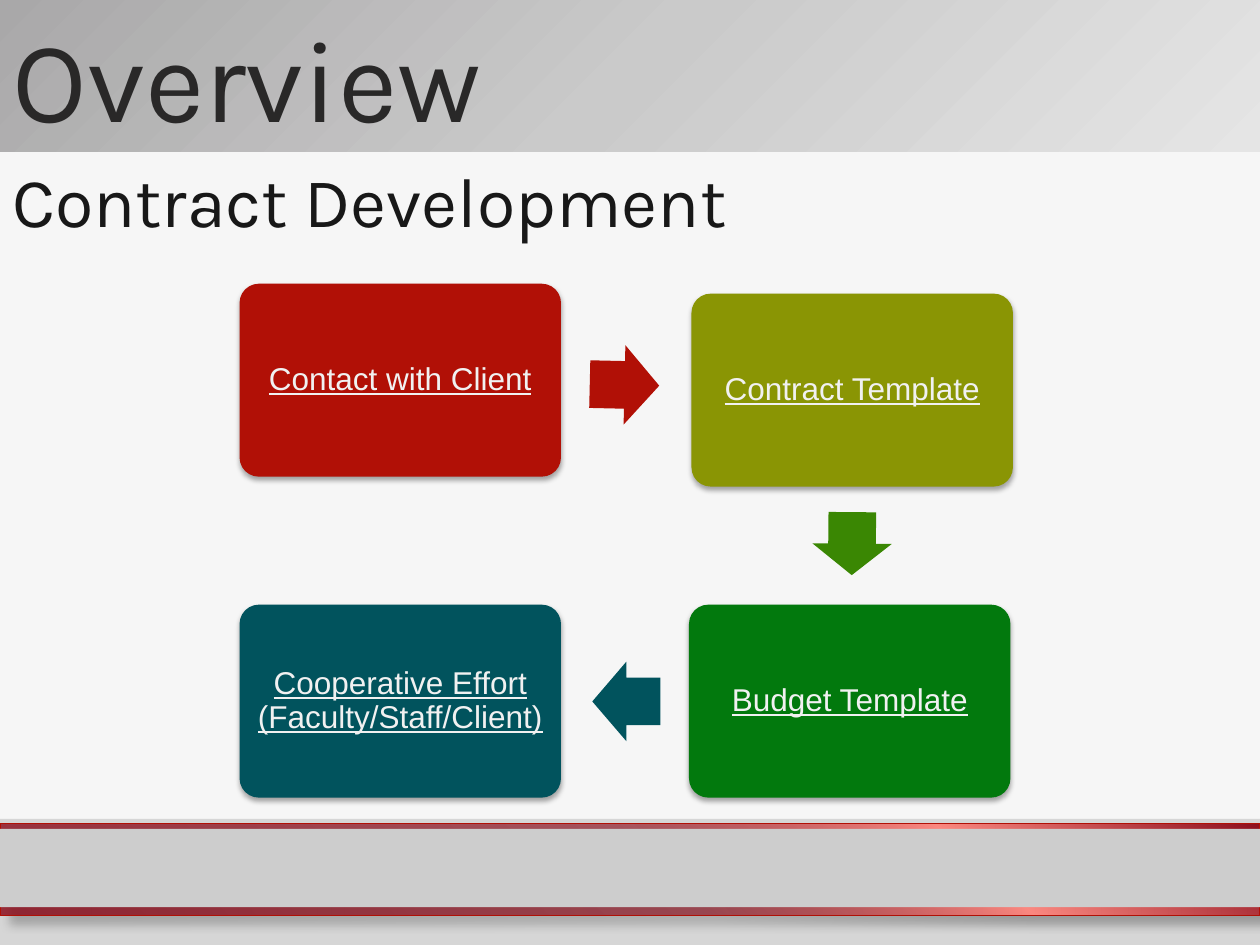
from lxml import etree
from pptx import Presentation
from pptx.dml.color import RGBColor
from pptx.enum.shapes import MSO_SHAPE
from pptx.enum.text import MSO_ANCHOR, PP_ALIGN
from pptx.oxml.ns import qn
from pptx.util import Cm, Pt

RECT = MSO_SHAPE.RECTANGLE
ROUNDED = MSO_SHAPE.ROUNDED_RECTANGLE
ARROW = MSO_SHAPE.RIGHT_ARROW
MIDDLE = MSO_ANCHOR.MIDDLE
LEFT, CENTER = PP_ALIGN.LEFT, PP_ALIGN.CENTER
TITLE_ONLY = 5

COLORS = {
    "page": "F6F6F6", "title": "292828", "subtitle": "181818", "label": "F1F1F1",
    "footer": "D6D6D6", "strip": "CDCDCD", "edge": "B11006",
    "maroon": "8C0E1D", "salmon": "FB8880", "shadow": "000000",
    "gray_dark": "A9A8A9", "gray_mid": "CACACA", "gray_light": "E5E5E5",
    "red": "B11006", "olive": "8A9504", "lime": "3A8703",
    "green": "02790D", "teal": "01535D",
}
STEP_SIZE = (6.48, 3.89)
# label, color, left and top within the diagram
STEPS = [
    ("Contact with Client", "red", 0, 0),
    ("Contract Template", "olive", 9.11, 0.2),
    ("Budget Template", "green", 9.06, 6.47),
    ("Cooperative Effort (Faculty/Staff/Client)", "teal", 0, 6.47),
]
# color, left, top, width within the diagram, rotation
ARROWS = [
    ("red", 7.06, 1.24, 1.4, 1.3),
    ("lime", 11.71, 4.44, 1.27, 90.5),
    ("teal", 7.11, 7.62, 1.37, 180),
]


def rgb(name):
    return RGBColor.from_string(COLORS[name])


def add_color(parent, name, alpha=100):
    color = etree.SubElement(parent, qn("a:srgbClr"), val=COLORS[name])
    if alpha < 100:
        etree.SubElement(color, qn("a:alpha"), val=str(alpha * 1000))


def set_gradient(shape, stops, angle):
    """Fill with (position, color, alpha) stops; the angle runs clockwise."""
    shape.fill.gradient()
    gradient = shape.element.spPr.find(qn("a:gradFill"))
    for child in list(gradient):
        gradient.remove(child)
    stop_list = etree.SubElement(gradient, qn("a:gsLst"))
    for position, name, alpha in stops:
        stop = etree.SubElement(stop_list, qn("a:gs"), pos=str(position * 1000))
        add_color(stop, name, alpha)
    etree.SubElement(gradient, qn("a:lin"), ang=str(angle * 60000), scaled="0")


def set_shadow(shape, alpha, blur, distance, angle):
    effects = shape.element.spPr.find(qn("a:effectLst"))
    shadow = etree.SubElement(
        effects, qn("a:outerShdw"), blurRad=str(Pt(blur)), dist=str(Pt(distance)),
        dir=str(angle * 60000), algn="ctr", rotWithShape="0")
    add_color(shadow, "shadow", alpha)


def add_block(page, kind, box, color):
    shape = page.shapes.add_shape(kind, *map(Cm, box))
    shape.shadow.inherit = False
    shape.fill.solid()
    shape.fill.fore_color.rgb = rgb(color)
    shape.line.fill.background()
    return shape


def write_text(shape, text, font, size, color, align=LEFT):
    frame = shape.text_frame
    frame.word_wrap = True
    frame.text = text
    para = frame.paragraphs[0]
    para.alignment = align
    para.font.name = font
    para.font.size = Pt(size)
    para.font.color.rgb = rgb(color)
    return para


def place_title(page, box):
    title = page.shapes.title
    title.left, title.top, title.width, title.height = map(Cm, box)
    set_gradient(title, [(0, "gray_dark", 100), (50, "gray_mid", 100),
                         (100, "gray_light", 100)], 45)
    write_text(title, "Overview", "Karla", 66, "title")
    title.text_frame.vertical_anchor = MIDDLE


def add_subtitle(page, box):
    subtitle = page.shapes.add_textbox(*map(Cm, box))
    write_text(subtitle, "Contract Development", "Karla", 40, "subtitle")


def add_footer(page, box):
    left, top, width, height = box
    add_block(page, RECT, box, "footer")
    band = add_block(page, RECT, (left, top + 0.1, width, 1.85), "maroon")
    set_gradient(band, [(0, "maroon", 84), (52, "maroon", 64),
                        (76, "salmon", 100), (100, "maroon", 100)], 312)
    band.line.color.rgb = rgb("edge")
    band.line.width = Pt(0.5)
    set_shadow(band, 28, 5.2, 7, 45)
    add_block(page, RECT, (left, top + 0.2, width, 1.58), "strip")


def add_step(page, box, label, color):
    step = add_block(page, ROUNDED, box, color)
    step.adjustments[0] = 0.1
    set_shadow(step, 35, 3.1, 1.8, 90)
    para = write_text(step, label, "Arial", 18, "label", CENTER)
    para.font.underline = True
    para.line_spacing = 0.9
    frame = step.text_frame
    frame.vertical_anchor = MIDDLE
    frame.margin_left = frame.margin_right = Cm(0.2)


def add_diagram(page, left, top):
    for label, color, x, y in STEPS:
        add_step(page, (left + x, top + y, *STEP_SIZE), label, color)
    for color, x, y, width, rotation in ARROWS:
        arrow = add_block(page, ARROW, (left + x, top + y, width, 1.6), color)
        arrow.adjustments[0] = 0.6
        arrow.adjustments[1] = 0.5
        arrow.rotation = rotation


def main():
    deck = Presentation()
    deck.slide_width, deck.slide_height = Cm(25.4), Cm(19.05)
    page = deck.slides.add_slide(deck.slide_layouts[TITLE_ONLY])
    page.background.fill.solid()
    page.background.fill.fore_color.rgb = rgb("page")
    add_footer(page, (0, 16.51, 25.4, 2.54))
    place_title(page, (0, 0, 25.4, 3.06))
    add_diagram(page, 4.83, 5.72)
    add_subtitle(page, (0, 3.05, 18.39, 2.74))
    deck.save("out.pptx")


if __name__ == "__main__":
    main()
